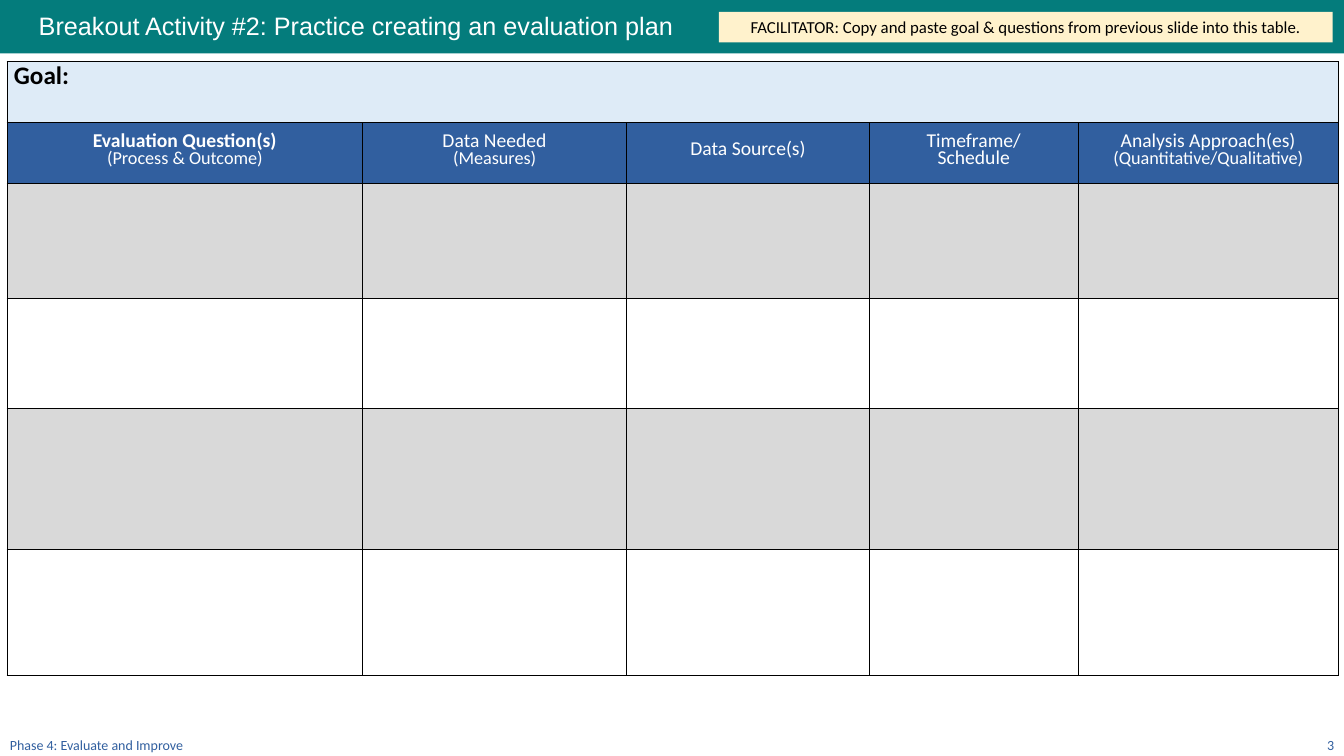
from lxml.etree import SubElement
from pptx import Presentation
from pptx.dml.color import RGBColor
from pptx.enum.shapes import MSO_SHAPE
from pptx.enum.text import MSO_ANCHOR, PP_ALIGN
from pptx.oxml.ns import qn
from pptx.util import Pt

# Content
TITLE = "Breakout Activity #2: Practice creating an evaluation plan"
FACILITATOR_NOTE = "FACILITATOR: Copy and paste goal & questions from previous slide into this table."
FOOTER = "Phase 4: Evaluate and Improve"
PAGE_NUMBER = "3"
GOAL = "Goal:"
# Each heading: lines of (text, size, bold)
HEADINGS = [
    [("Evaluation Question(s)", 14, True), ("(Process & Outcome)", 13, False)],
    [("Data Needed", 14, False), ("(Measures)", 13, False)],
    [("Data Source(s)", 14, False)],
    [("Timeframe/", 14, False), ("Schedule", 14, False)],
    [("Analysis Approach(es)", 14, False), ("(Quantitative/Qualitative)", 13, False)],
]
COLUMN_WIDTHS = [254, 188.6, 173.5, 149, 186]
ROW_HEIGHTS = [43.4, 43.4, 82, 79, 100.4, 90]
ROW_FILLS = ["DEEBF7", "315F9F", "D9D9D9", "FFFFFF", "D9D9D9", "FFFFFF"]
TEAL, CREAM, BLUE, WHITE, BLACK = "047C7C", "FFF2CC", "315F9F", "FFFFFF", "000000"


def color(hex_string):
    return RGBColor.from_string(hex_string)


def write(frame, lines, font="Calibri", fill=BLACK, align=PP_ALIGN.LEFT,
          anchor=MSO_ANCHOR.TOP, spacing=None):
    """Write (text, size, bold) lines into one paragraph with line breaks."""
    frame.word_wrap = True
    frame.vertical_anchor = anchor
    paragraph = frame.paragraphs[0]
    paragraph.alignment = align
    if spacing:
        paragraph.line_spacing = spacing
    for index, (text, size, bold) in enumerate(lines):
        if index:
            paragraph.add_line_break()
        run = paragraph.add_run()
        run.text = text
        run.font.name = font
        run.font.size = Pt(size)
        run.font.bold = bold
        run.font.color.rgb = color(fill)


def add_box(slide, left, top, width, height, fill):
    shape = slide.shapes.add_shape(
        MSO_SHAPE.RECTANGLE, Pt(left), Pt(top), Pt(width), Pt(height))
    shape.shadow.inherit = False
    shape.fill.solid()
    shape.fill.fore_color.rgb = color(fill)
    shape.line.fill.background()
    return shape


def add_text(slide, left, top, width, height, text, size, **text_format):
    box = slide.shapes.add_textbox(Pt(left), Pt(top), Pt(width), Pt(height))
    write(box.text_frame, [(text, size, False)], **text_format)


def style_cell(cell, fill):
    properties = cell._tc.get_or_add_tcPr()
    for side in ("a:lnL", "a:lnR", "a:lnT", "a:lnB"):
        border = SubElement(properties, qn(side), w=str(Pt(0.5)))
        solid = SubElement(border, qn("a:solidFill"))
        SubElement(solid, qn("a:srgbClr"), val=BLACK)
    cell.fill.solid()
    cell.fill.fore_color.rgb = color(fill)
    cell.margin_left = cell.margin_right = Pt(5)
    cell.margin_top = cell.margin_bottom = Pt(0)


def add_plan_table(slide):
    table = slide.shapes.add_table(
        len(ROW_HEIGHTS), len(COLUMN_WIDTHS), Pt(5), Pt(44),
        Pt(sum(COLUMN_WIDTHS)), Pt(sum(ROW_HEIGHTS))).table
    for column, width in zip(table.columns, COLUMN_WIDTHS):
        column.width = Pt(width)
    for row, height, fill in zip(table.rows, ROW_HEIGHTS, ROW_FILLS):
        row.height = Pt(height)
        for cell in row.cells:
            style_cell(cell, fill)

    # Goal row across all columns
    goal = table.cell(0, 0)
    goal.merge(table.cell(0, len(COLUMN_WIDTHS) - 1))
    goal.margin_top = Pt(9.5)
    write(goal.text_frame, [(GOAL, 18, True)], spacing=Pt(12))

    # Column headings
    for index, lines in enumerate(HEADINGS):
        cell = table.cell(1, index)
        write(cell.text_frame, lines, fill=WHITE, align=PP_ALIGN.CENTER, spacing=Pt(12))
        cell.vertical_anchor = MSO_ANCHOR.MIDDLE


def main():
    presentation = Presentation()
    presentation.slide_width, presentation.slide_height = Pt(960), Pt(540)
    slide = presentation.slides.add_slide(presentation.slide_layouts[6])

    # Header band and footer
    add_box(slide, 0, 0, 960, 38.2, TEAL)
    add_text(slide, 0, 527, 324, 15, FOOTER, 10, fill=BLUE, anchor=MSO_ANCHOR.BOTTOM)
    add_text(slide, 744, 527, 216, 15, PAGE_NUMBER, 10, fill=BLUE,
             align=PP_ALIGN.RIGHT, anchor=MSO_ANCHOR.BOTTOM)

    add_plan_table(slide)

    # Title and facilitator note
    add_text(slide, 20.6, 6, 695.5, 32, TITLE, 18, font="Arial", fill=WHITE, spacing=0.9)
    note = add_box(slide, 513.5, 8.5, 438.5, 21.8, CREAM)
    write(note.text_frame, [(FACILITATOR_NOTE, 12, False)],
          align=PP_ALIGN.CENTER, anchor=MSO_ANCHOR.MIDDLE)

    presentation.save("out.pptx")


if __name__ == "__main__":
    main()
